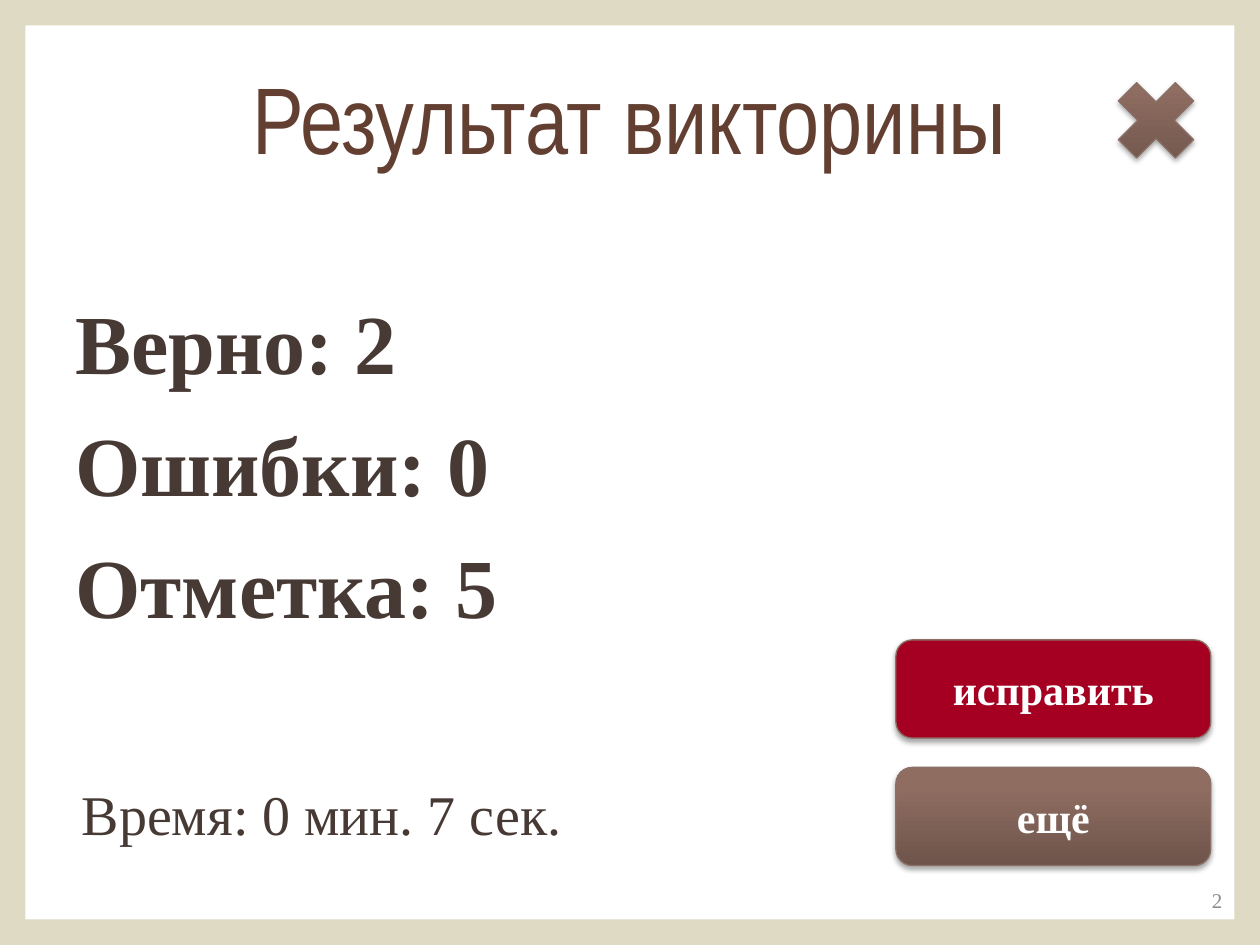
from pptx import Presentation
from pptx.dml.color import RGBColor
from pptx.enum.shapes import MSO_SHAPE as Shape
from pptx.enum.text import MSO_ANCHOR as Anchor, PP_ALIGN as Align
from pptx.oxml import parse_xml
from pptx.oxml.ns import nsdecls, qn
from pptx.util import Cm, Pt

COLORS = {
    "frame": "DEDAC4", "title": "633F32", "text": "473A35",
    "number": "8C8C8C", "white": "FFFFFF", "red": "A50021",
    "outline": "8C7067", "shadow": "000000",
}
BROWN_STOPS = [(0, "6E544B"), (80, "8F6D61"), (100, "906D61")]
SERIF = "Times New Roman"


def rgb(name):
    return RGBColor.from_string(COLORS[name])


def write(frame, lines, size, color, font=SERIF, bold=False,
          align=Align.LEFT, anchor=Anchor.MIDDLE, gap=0):
    frame.word_wrap = True
    frame.vertical_anchor = anchor
    frame.text = "\n".join(lines)
    for index, paragraph in enumerate(frame.paragraphs):
        paragraph.alignment = align
        if index:
            paragraph.space_before = Pt(gap)
        for run in paragraph.runs:
            run.font.name = font
            run.font.size = Pt(size)
            run.font.bold = bold
            run.font.color.rgb = rgb(color)


def add_text(slide, box, lines, size, color, top_inset=0.13, **style):
    frame = slide.shapes.add_textbox(*map(Cm, box)).text_frame
    frame.margin_top = Cm(top_inset)
    write(frame, lines, size, color, **style)


def fill_brown(shape):
    """Vertical gradient, darkest at the bottom."""
    shape.fill.gradient()
    shape.fill.gradient_angle = 90
    stops = "".join(
        f'<a:gs pos="{position * 1000}"><a:srgbClr val="{color}"/></a:gs>'
        for position, color in BROWN_STOPS)
    old_list = shape.element.spPr.find(".//" + qn("a:gsLst"))
    old_list.getparent().replace(
        old_list, parse_xml(f'<a:gsLst {nsdecls("a")}>{stops}</a:gsLst>'))


def add_control(slide, kind, box, label="", fill=None):
    """Raised clickable-looking shape; brown gradient unless a fill is named."""
    control = slide.shapes.add_shape(kind, *map(Cm, box))
    if fill:
        control.fill.solid()
        control.fill.fore_color.rgb = rgb(fill)
    else:
        fill_brown(control)
    control.line.color.rgb = rgb("outline")
    control.line.width = Pt(0.75)
    control.shadow.inherit = False
    effects = control.element.spPr.find(qn("a:effectLst"))
    effects.append(parse_xml(
        f'<a:outerShdw {nsdecls("a")} blurRad="{Pt(3.1)}" dist="{Pt(1.8)}" '
        f'dir="5400000" rotWithShape="0"><a:srgbClr val="{COLORS["shadow"]}">'
        '<a:alpha val="35000"/></a:srgbClr></a:outerShdw>'))
    if label:
        write(control.text_frame, [label], 24, "white", bold=True,
              align=Align.CENTER)


def add_border(slide, width, height):
    border = slide.shapes.add_shape(Shape.FRAME, 0, 0, width, height)
    border.adjustments[0] = 0.027
    border.fill.solid()
    border.fill.fore_color.rgb = rgb("frame")
    border.line.fill.background()
    border.shadow.inherit = False


def main():
    deck = Presentation()
    deck.slide_width, deck.slide_height = Cm(25.4), Cm(19.05)
    slide = deck.slides.add_slide(deck.slide_layouts[6])
    slide.background.fill.solid()
    slide.background.fill.fore_color.rgb = rgb("white")
    add_border(slide, deck.slide_width, deck.slide_height)

    add_text(slide, (1.27, 0.76, 22.86, 3.18), ["Результат викторины"],
             54, "title", font="Arial Narrow", align=Align.CENTER)
    add_text(slide, (1.27, 5.56, 16.38, 9.12),
             ["Верно: 2", "Ошибки: 0", "Отметка: 5"], 48, "text",
             top_inset=0.3, bold=True, anchor=Anchor.TOP, gap=12)
    add_text(slide, (1.4, 15.47, 16.28, 1.78), ["Время: 0 мин. 7 сек."],
             32, "text", top_inset=0.25, anchor=Anchor.TOP)

    buttons = [("ещё", 15.47, None), ("исправить", 12.9, "red")]
    for label, top, fill in buttons:
        add_control(slide, Shape.ROUNDED_RECTANGLE, (18.06, top, 6.35, 1.98),
                    label, fill)

    add_text(slide, (23.67, 17.73, 1.22, 0.81), ["2"], 12, "number",
             align=Align.RIGHT)
    add_control(slide, Shape.MATH_MULTIPLY, (22.2, 1.32, 2.21, 2.21))
    deck.save("out.pptx")


if __name__ == "__main__":
    main()
